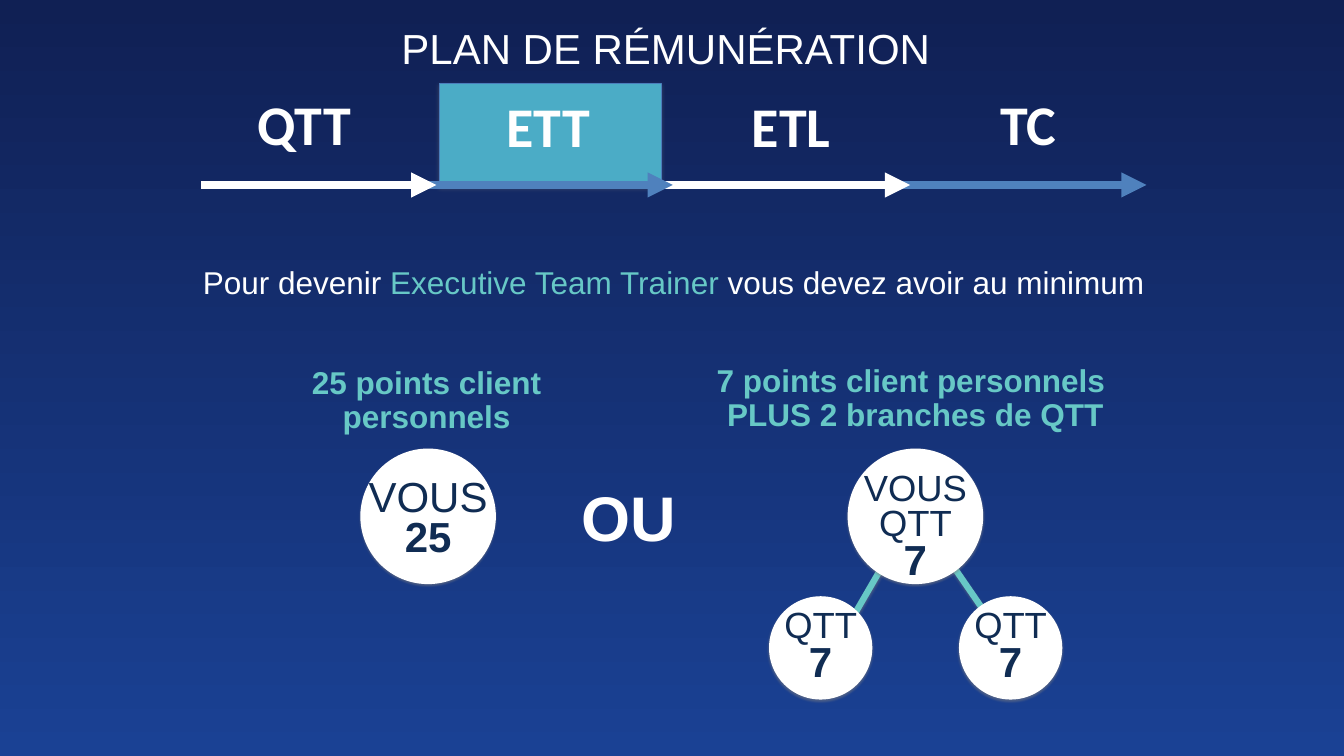
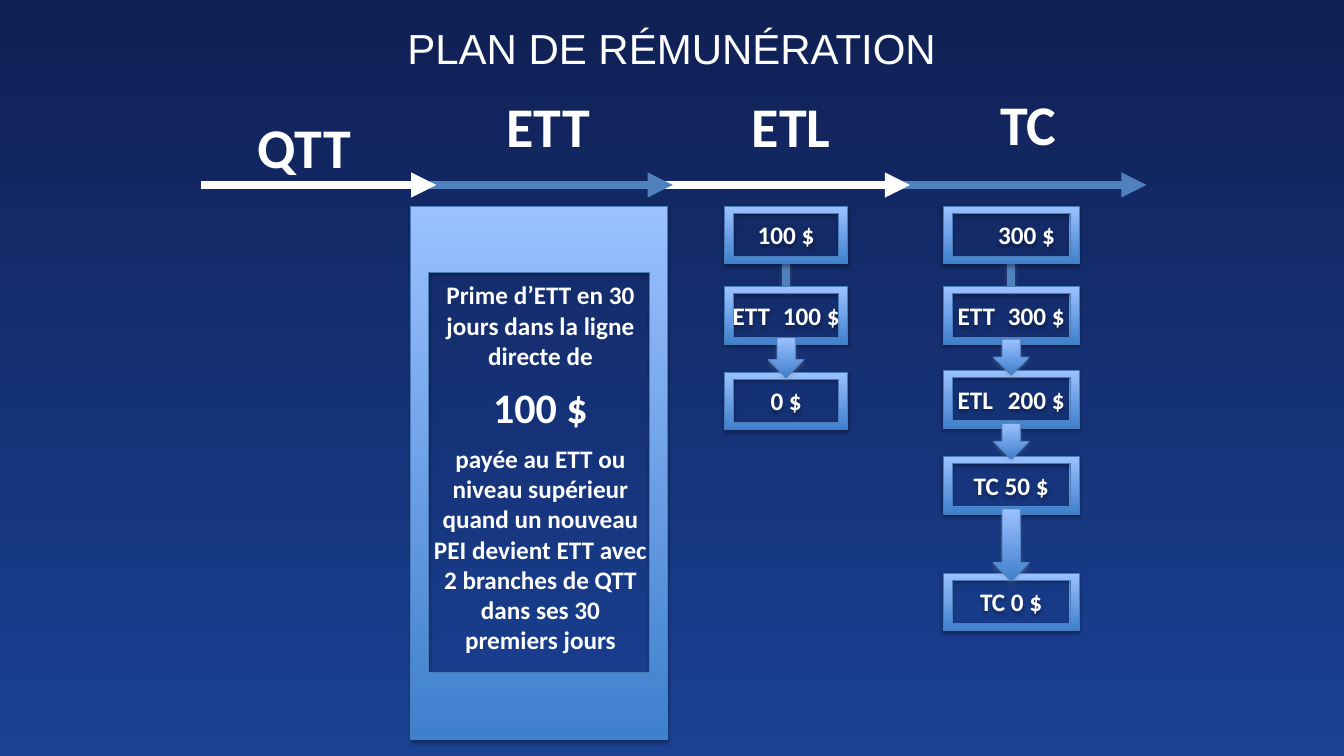
import pptx
import pptx.util
import pptx.dml.color
import pptx.enum.shapes
import pptx.enum.text
import pptx.oxml.ns
from lxml import etree

Inches = pptx.util.Inches
Pt = pptx.util.Pt
qn = pptx.oxml.ns.qn
SHAPE = pptx.enum.shapes.MSO_SHAPE
ANCHOR = pptx.enum.text.MSO_ANCHOR

WHITE, TEAL, NAVY = "FFFFFF", "67C8C6", "102C53"
BLUE, EDGE, CYAN = "4F81BD", "4A7EBB", "4BACC6"
NIGHT = ("1A4194", "102054")
SKY = ("9BC1FF", "3F80CD")
TITLE = "PLAN DE RÉMUNÉRATION"
GREY = ("808080", 35, 6, 3)
BLACK = ("000000", 35, 6, 3)
SOFT = ("808080", 50, 3, 2)

RANKS = {
    "QTT": (3.93, 1.66, 4.22, 1.55),
    "ETT": (8.4, 1.69, 4.96, 1.55),
    "ETL": (13.35, 1.7, 4.7, 1.55),
    "TC": (18.06, 1.65, 4.69, 1.55),
}


def rgb(code):
    return pptx.dml.color.RGBColor.from_string(code)


def blend(fill, pair, angle):
    fill.gradient()
    fill.gradient_angle = angle
    for stop, code in zip(fill.gradient_stops, pair):
        stop.color.rgb = rgb(code)


def shade(shape, look=None):
    props = shape._element.spPr
    for old in props.findall(qn("a:effectLst")):
        props.remove(old)
    effects = etree.SubElement(props, qn("a:effectLst"))
    if look:
        code, alpha, blur, dist = look
        outer = etree.SubElement(
            effects, qn("a:outerShdw"), blurRad=str(Pt(blur)),
            dist=str(Pt(dist)), dir="5400000", rotWithShape="0")
        color = etree.SubElement(outer, qn("a:srgbClr"), val=code)
        etree.SubElement(color, qn("a:alpha"), val=str(alpha * 1000))


def paint(shape, fill, look, edge=None):
    if isinstance(fill, tuple):
        blend(shape.fill, fill, 270)
    else:
        shape.fill.solid()
        shape.fill.fore_color.rgb = rgb(fill)
    if edge:
        shape.line.color.rgb = rgb(edge)
        shape.line.width = Pt(1)
    else:
        shape.line.fill.background()
    shade(shape, look)


def write(shape, paras, size=36, face="Calibri", color=WHITE, bold=False,
          anchor=ANCHOR.MIDDLE, inset=0.1, ls=None, sb=0, wrap=True, tabs=()):
    frame = shape.text_frame
    frame.word_wrap = wrap
    frame.vertical_anchor = anchor
    frame.margin_left = frame.margin_right = Inches(inset)
    frame.margin_top = frame.margin_bottom = Inches(inset)
    paras = [paras] if isinstance(paras, str) else paras
    for i, runs in enumerate(paras):
        para = frame.add_paragraph() if i else frame.paragraphs[0]
        para.alignment = pptx.enum.text.PP_ALIGN.CENTER
        if ls:
            para.line_spacing = ls
        para.space_before = Pt(sb if i else 0)
        if tabs:
            stops = etree.SubElement(para._p.get_or_add_pPr(), qn("a:tabLst"))
            for tab in tabs:
                etree.SubElement(stops, qn("a:tab"), pos=str(Inches(tab)), algn="l")
        for words, own in [(runs, {})] if isinstance(runs, str) else runs:
            run = para.add_run()
            run.text = words
            run.font.name = face
            run.font.size = Pt(own.get("size", size))
            run.font.bold = own.get("bold", bold)
            run.font.color.rgb = rgb(own.get("color", color))


def label(shapes, box, paras, **style):
    item = shapes.add_textbox(*map(Inches, box))
    write(item, paras, **style)
    return item


def link(slide, start, end, color, width=12, head=False, look=None):
    line = slide.shapes.add_connector(
        pptx.enum.shapes.MSO_CONNECTOR.STRAIGHT, *map(Inches, start + end))
    line.line.color.rgb = rgb(color)
    line.line.width = Pt(width)
    if head:
        etree.SubElement(line.line._get_or_add_ln(), qn("a:tailEnd"), type="triangle")
    shade(line, look)


def begin(deck, title):
    slide = deck.slides.add_slide(deck.slide_layouts[5])
    blend(slide.background.fill, NIGHT, 90)
    head = slide.shapes.title
    head.left, head.top, head.width, head.height = map(Inches, (3.33, 0.48, 20, 0.93))
    write(head, title, size=60, face="Arial", inset=0)
    return slide


def track(slide, y, **changes):
    for name, box in RANKS.items():
        label(slide.shapes, changes.get(name, box), name, size=80, bold=True,
              anchor=ANCHOR.BOTTOM, ls=0.8 if name in changes else None)
    for left, right, color in ((3.99, 22.75, BLUE), (12.88, 18.06, WHITE),
                               (8.68, 13.35, BLUE), (3.99, 8.66, WHITE)):
        link(slide, (left, y), (right, y), color, head=True)


def disc(slide, x, y, size, drop, paras):
    group = slide.shapes.add_group_shape()
    ball = group.shapes.add_shape(SHAPE.OVAL, *map(Inches, (x, y, size, size)))
    paint(ball, WHITE, SOFT)
    label(group.shapes, (x, y + drop, size, size - drop), paras, size=52,
          face="Arial", color=NAVY, inset=0.13, ls=0.8, anchor=ANCHOR.TOP)


def ring(slide, box, rim, text=None):
    x, y, w, h = box
    dx, dy = rim
    outer = [(x, y), (x + w, y), (x + w, y + h), (x, y + h)]
    inner = [(x + dx, y + dy), (x + dx, y + h - dy),
             (x + w - dx, y + h - dy), (x + w - dx, y + dy)]
    build = slide.shapes.build_freeform(Inches(x), Inches(y), scale=1.0)
    build.add_line_segments([tuple(map(Inches, p)) for p in outer[1:]], close=True)
    build.move_to(*map(Inches, inner[0]))
    build.add_line_segments([tuple(map(Inches, p)) for p in inner[1:]], close=True)
    shape = build.convert_to_shape()
    paint(shape, SKY, BLACK, EDGE)
    if text:
        write(shape, text, bold=True, inset=0, tabs=(0.5, 1))


def chain(slide, x, width, cells, arrows):
    mid = x + width / 2
    link(slide, (mid, 5.2), (mid, 5.77), BLUE, look=GREY)
    for y, text in cells:
        ring(slide, (x, y, width, 1.14), (0.18, 0.14), text)
    for y, height in arrows:
        arrow = slide.shapes.add_shape(
            SHAPE.DOWN_ARROW, *map(Inches, (mid - 0.36, y, 0.72, height)))
        paint(arrow, SKY, GREY, EDGE)


def bonus(slide, x, y):
    label(slide.shapes, (x + 0.35, y + 1.36, 4.45, 7.77),
          ["Prime d’ETT en 30 jours dans la ligne directe de",
           [("100 $", {"size": 60})],
           "payée au ETT ou niveau supérieur quand un nouveau PEI devient ETT "
           "avec 2 branches de QTT dans ses 30 premiers jours"],
          bold=True, sb=16, anchor=ANCHOR.TOP)
    ring(slide, (x, y, 5.09, 10.58), (0.36, 1.32))


def solo(slide, x, y):
    label(slide.shapes, (x, y, 4.73, 1.51), "25 points client personnels",
          size=45, face="Arial", color=TEAL, bold=True, ls=0.9, inset=0.08)
    disc(slide, x + 1.05, y + 1.69, 2.69, 0.5,
         [[("VOUS", {"size": 60})], [("25", {"size": 60, "bold": True})]])


def team(slide, x, y):
    seven = [("7", {"size": 60, "bold": True})]
    label(slide.shapes, (x, y, 8.23, 1.51),
          ["7 points client personnels ", "PLUS 2 branches de QTT"],
          size=45, face="Arial", color=TEAL, bold=True, ls=0.9, inset=0.08, wrap=False)
    for start, end in (((5.99, 5.71), (4.1, 2.96)), ((2.43, 5.85), (3.95, 3.23))):
        link(slide, (x + start[0], y + start[1]), (x + end[0], y + end[1]),
             TEAL, width=9, look=("808080", 50, 4, 2))
    disc(slide, x + 2.77, y + 1.74, 2.69, 0.37, ["VOUS", "QTT", seven])
    for dx in (1.21, 4.98):
        disc(slide, x + dx, y + 4.67, 2.05, 0.15, ["QTT", seven])


def rules(deck):
    slide = begin(deck, TITLE + " ")
    mark = slide.shapes.add_shape(SHAPE.RECTANGLE, *map(Inches, (8.72, 1.65, 4.4, 2.04)))
    paint(mark, CYAN, GREY, EDGE)
    track(slide, 3.67)
    label(slide.shapes, (2.84, 5.17, 21.05, 0.86),
          [[("Pour devenir ", {}), ("Executive Team Trainer ", {"color": TEAL}),
            ("vous devez avoir au minimum", {})]],
          size=45, face="Arial", inset=0.08)
    solo(slide, 6.1, 7.21)
    label(slide.shapes, (11.46, 9.47, 2.05, 1.55), "OU", size=90, face="Arial",
          bold=True, inset=0.08, wrap=False)
    team(slide, 14.05, 7.16)


def gains(deck):
    slide = begin(deck, TITLE)
    track(slide, 3.67, QTT=(3.93, 1.62, 4.22, 2.04))
    bonus(slide, 8.15, 4.09)
    chain(slide, 14.38, 2.44,
          [(4.09, "100 $"), (5.69, "ETT\t100 $"), (7.38, "0 $")], [(6.7, 0.79)])
    chain(slide, 18.72, 2.69,
          [(4.09, "\t 300 $"), (5.69, "ETT\t300 $"), (7.35, "ETL\t200 $"),
           (9.06, "TC 50 $"), (11.37, "TC 0 $")],
          [(6.73, 0.71), (8.4, 0.71), (10.1, 1.43)])


def main():
    deck = pptx.Presentation()
    deck.slide_width, deck.slide_height = Inches(26.67), Inches(15)
    rules(deck)
    gains(deck)
    deck.save("out.pptx")


if __name__ == "__main__":
    main()
